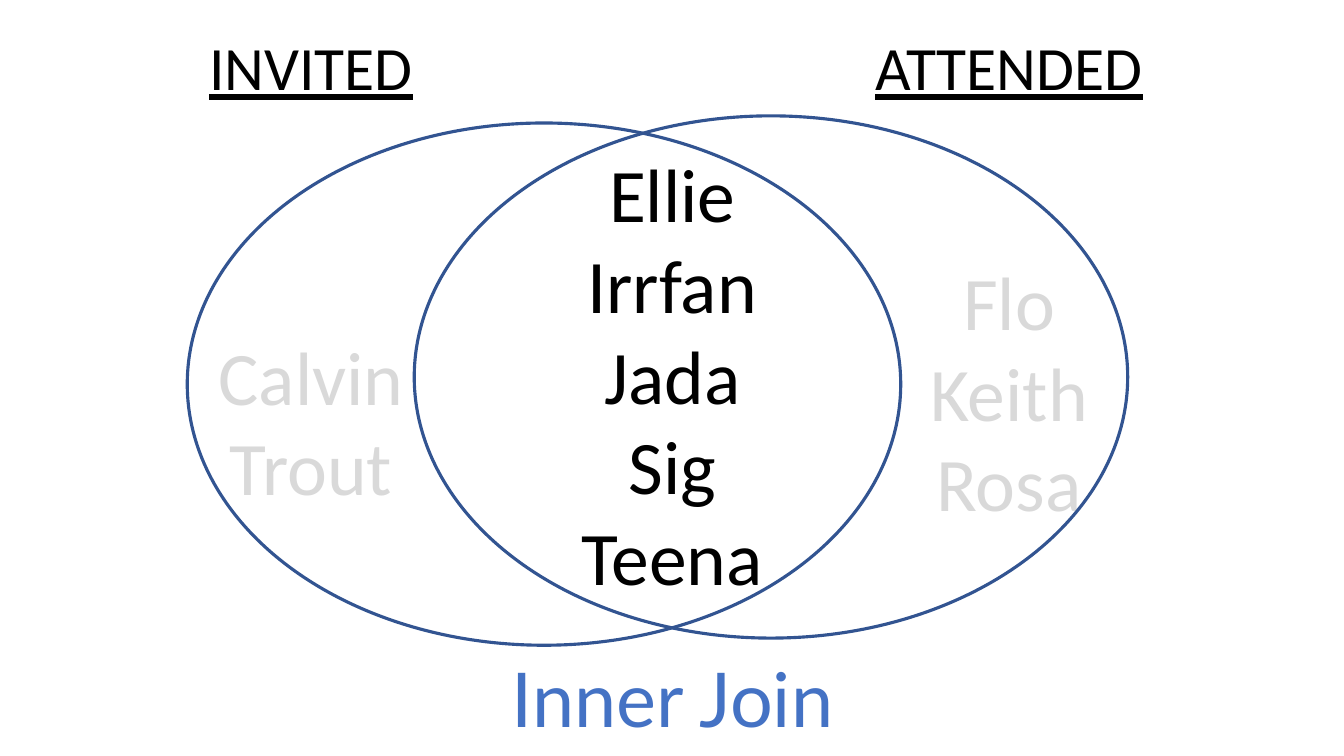
from dataclasses import dataclass

from pptx import Presentation
from pptx.dml.color import RGBColor
from pptx.enum.shapes import MSO_SHAPE as Preset
from pptx.enum.text import MSO_ANCHOR as Anchor, MSO_AUTO_SIZE as AutoSize, PP_ALIGN as Align
from pptx.util import Cm, Pt


@dataclass(frozen=True)
class Theme:
    body_font: str = "Calibri"
    title_font: str = "Lato"
    heading_size: int = 44
    name_size: int = 54
    ink: str = "000000"
    faded: str = "D9D9D9"
    accent: str = "4472C4"
    outline: str = "325491"
    outline_width: float = 2.25


class VennSlide:
    def __init__(self, deck, theme):
        self.theme = theme
        self.page = deck.slides.add_slide(deck.slide_layouts[5])

    def set_lines(self, box, lines, font_name, size, color, underline=False):
        """Fill a box with centred lines in one style."""
        frame = box.text_frame
        frame.text = "\n".join(lines)
        frame.auto_size = AutoSize.NONE
        frame.word_wrap = False
        frame.vertical_anchor = Anchor.TOP
        for para in frame.paragraphs:
            para.alignment = Align.CENTER
            font = para.font
            font.name, font.size = font_name, Pt(size)
            font.color.rgb = RGBColor.from_string(color)
            font.underline = underline

    def title(self, text, left, top, width, height):
        box = self.page.shapes.title
        box.left, box.top, box.width, box.height = map(Cm, (left, top, width, height))
        self.set_lines(box, [text], self.theme.title_font, self.theme.name_size,
                       self.theme.accent)

    def heading(self, text, left, top, width, height):
        box = self.page.shapes.add_textbox(*map(Cm, (left, top, width, height)))
        self.set_lines(box, [text], self.theme.body_font, self.theme.heading_size,
                       self.theme.ink, underline=True)

    def names(self, people, color, left, top, width, height):
        box = self.page.shapes.add_textbox(*map(Cm, (left, top, width, height)))
        self.set_lines(box, people, self.theme.body_font, self.theme.name_size, color)

    def ellipse(self, left, top, width, height):
        oval = self.page.shapes.add_shape(Preset.OVAL, *map(Cm, (left, top, width, height)))
        oval.shadow.inherit = False
        oval.fill.background()
        oval.line.color.rgb = RGBColor.from_string(self.theme.outline)
        oval.line.width = Pt(self.theme.outline_width)


def main():
    deck = Presentation()
    deck.slide_width, deck.slide_height = Cm(33.87), Cm(19.05)
    theme = Theme()
    venn = VennSlide(deck, theme)

    sides = [
        ("ATTENDED", ["Flo", "Keith", "Rosa"], 21.77, 7.32, 6.3, 7.13),
        ("INVITED", ["Calvin", "Trout"], 4.98, 5.72, 8.18, 4.85),
    ]
    for label, people, left, width, names_top, names_height in sides:
        venn.heading(label, left, 0.61, width, 2.15)
        venn.names(people, theme.faded, left, names_top, width, names_height)

    venn.names(["Ellie", "Irrfan", "Jada", "Sig", "Teena"], theme.ink,
               14.38, 3.58, 5.13, 11.79)
    for left, top in [(4.72, 3.1), (10.44, 2.92)]:
        venn.ellipse(left, top, 17.98, 13.16)
    venn.title("Inner Join", 11.79, 16.31, 10.31, 2.57)

    deck.save("out.pptx")


if __name__ == "__main__":
    main()
